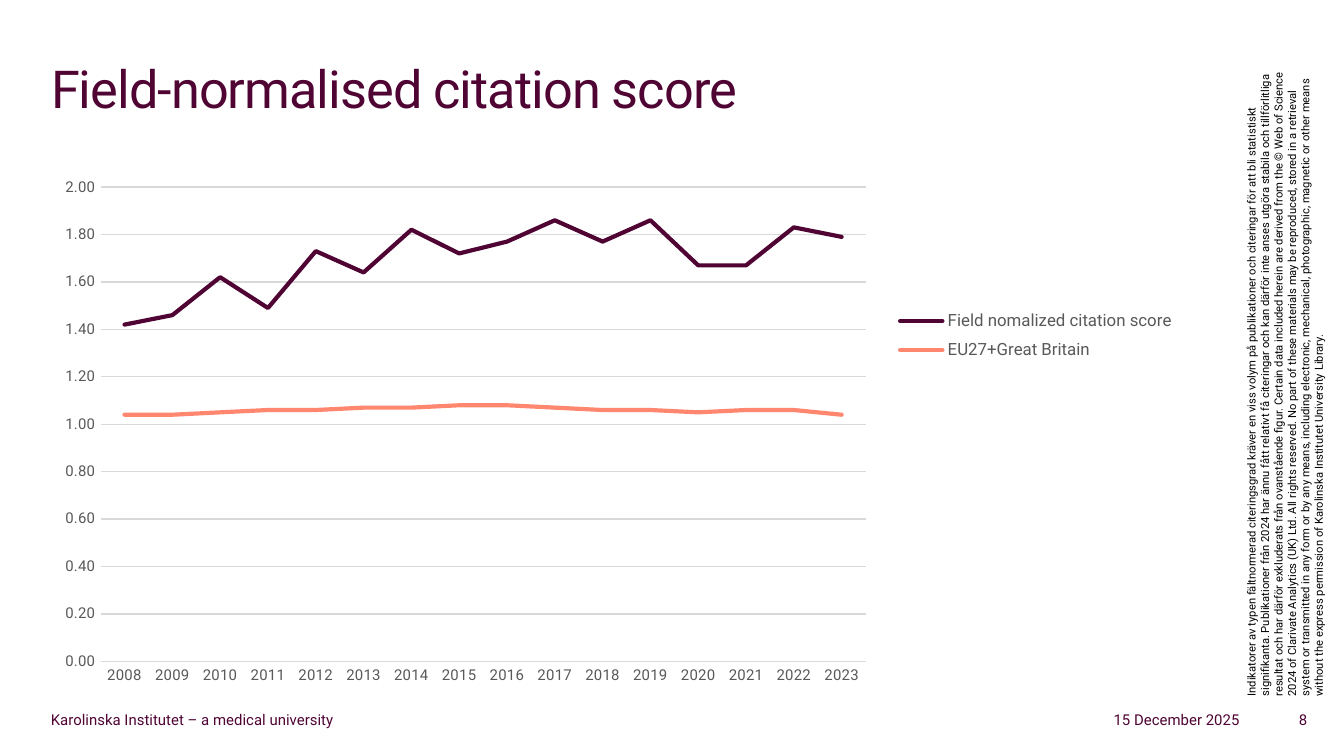
from dataclasses import dataclass

from pptx import Presentation
from pptx import util as u
from pptx.chart import data as cd
from pptx.dml.color import RGBColor
from pptx.enum import chart as ch, text as tx
from pptx.oxml import parse_xml
from pptx.oxml.ns import nsdecls


@dataclass(frozen=True)
class Theme:
    """Colours, font and type sizes of the slide."""
    font: str = "Roboto"
    plum: str = "4F0433"
    coral: str = "FF876F"
    gray: str = "595959"
    rule: str = "D9D9D9"
    ink: str = "000000"
    head: float = 28
    base: float = 10
    key: float = 9
    small: float = 8
    note: float = 6


T = Theme()
W = u.Inches(10)
H = W * 9 // 16

YEARS = [str(year) for year in range(2008, 2024)]
SCORES = {
    "Field nomalized citation score": (T.plum, [
        1.42, 1.46, 1.62, 1.49, 1.73, 1.64, 1.82, 1.72,
        1.77, 1.86, 1.77, 1.86, 1.67, 1.67, 1.83, 1.79]),
    "EU27+Great Britain": (T.coral, [
        1.04, 1.04, 1.05, 1.06, 1.06, 1.07, 1.07, 1.08,
        1.08, 1.07, 1.06, 1.06, 1.05, 1.06, 1.06, 1.04]),
}
NOTE = (
    "Indikatorer av typen fältnormerad citeringsgrad kräver en viss volym på "
    "publikationer och citeringar för att bli statistiskt signifikanta. "
    "Publikationer från 2024 har ännu fått relativt få citeringar och kan därför "
    "inte anses utgöra stabila och tillförlitliga resultat och har därför "
    "exkluderats från ovanstående figur. Certain data included herein are derived "
    "from the © Web of Science 2024 of Clarivate Analytics (UK) Ltd. All rights "
    "reserved. No part of these materials may be reproduced, stored in a retrieval "
    "system or transmitted in any form or by any means, including electronic, "
    "mechanical, photographic, magnetic or other means without the express "
    "permission of Karolinska Institutet University Library."
)


def span(x, y, w, h):
    """Turn percentages of the slide into a box of lengths."""
    return [int(side * part / 100) for side, part in zip((W, H, W, H), (x, y, w, h))]


def style(font, size, color):
    """Apply the theme font with a size and a colour."""
    font.name, font.size, font.bold = T.font, u.Pt(size), False
    font.color.rgb = RGBColor.from_string(color)


def write(shape, words, size, color, anchor, align=tx.PP_ALIGN.LEFT):
    """Set and format one paragraph, and return its run."""
    frame = shape.text_frame
    frame.text = words
    frame.word_wrap = True
    frame.auto_size = tx.MSO_AUTO_SIZE.NONE
    frame.vertical_anchor = anchor
    para = frame.paragraphs[0]
    para.alignment = align
    style(para.runs[0].font, size, color)
    return para.runs[0]


def add_head(slide, box):
    """Move the title placeholder into the box and fill it."""
    title = slide.shapes.title
    title.left, title.top, title.width, title.height = box
    run = write(title, "Field-normalised citation score", T.head, T.plum,
                tx.MSO_ANCHOR.TOP)
    run.font._element.set("spc", "-50")


def add_foot(slide, box):
    """Place the sender, date and page number along the box."""
    left, top, width, height = box
    right = tx.PP_ALIGN.RIGHT
    parts = (
        ("Karolinska Institutet – a medical university", 0, 29.6, tx.PP_ALIGN.LEFT),
        ("15 December 2025", 72.9, 21.8, right),
        ("8", 92.1, 7.85, right),
    )
    for words, start, share, align in parts:
        cell = slide.shapes.add_textbox(
            left + int(width * start / 100), top, int(width * share / 100), height)
        write(cell, words, T.small, T.plum, tx.MSO_ANCHOR.MIDDLE, align)
        cell.text_frame.margin_top = u.Inches(0.04)
        cell.text_frame.margin_bottom = 0


def add_note(slide, box):
    """Place the terms of use, turned to read upwards."""
    note = slide.shapes.add_textbox(*box)
    note.rotation = 270
    write(note, NOTE, T.note, T.ink, tx.MSO_ANCHOR.TOP)


def layout(x, y, w, h, inner=False):
    """Build a fixed chart layout from percentages of the chart."""
    target = '<c:layoutTarget val="inner"/>' if inner else ""
    modes = "".join(f'<c:{k}Mode val="edge"/>' for k in "xy")
    sides = "".join(f'<c:{k} val="{v / 100}"/>' for k, v in zip("xywh", (x, y, w, h)))
    return parse_xml(f'<c:layout {nsdecls("c")}><c:manualLayout>'
                     f'{target}{modes}{sides}</c:manualLayout></c:layout>')


def fix(node, spot):
    """Replace the layout of a chart part."""
    for old in node.xpath("c:layout"):
        node.remove(old)
    entry = node.xpath("c:legendPos")
    if entry:
        entry[0].addnext(spot)
    else:
        node.insert(0, spot)


def rule(line):
    """Draw a thin light line."""
    line.color.rgb = RGBColor.from_string(T.rule)
    line.width = u.Pt(0.75)


def add_trend(slide, box):
    """Place the line chart with its axes and key."""
    data = cd.CategoryChartData(number_format="0.00")
    data.categories = YEARS
    for name, (_, scores) in SCORES.items():
        data.add_series(name, scores)
    chart = slide.shapes.add_chart(ch.XL_CHART_TYPE.LINE, *box, data).chart
    chart.has_title = False
    style(chart.font, T.base, T.ink)
    plot = chart.plots[0]
    plot.vary_by_categories = False

    for line, (color, _) in zip(plot.series, SCORES.values()):
        line.smooth = False
        line.marker.style = ch.XL_MARKER_STYLE.NONE
        line.format.line.color.rgb = RGBColor.from_string(color)
        line.format.line.width = u.Pt(2.25)
    for stroke in chart._chartSpace.xpath(".//c:ser/c:spPr/a:ln"):
        stroke.set("cap", "rnd")

    years, score = chart.category_axis, chart.value_axis
    for axis in (years, score):
        axis.major_tick_mark = axis.minor_tick_mark = ch.XL_TICK_MARK.NONE
        style(axis.tick_labels.font, T.small, T.gray)
    rule(years.format.line)
    score.format.line.fill.background()
    score.minimum_scale, score.maximum_scale, score.major_unit = 0, 2, 0.2
    score.tick_labels.number_format = "0.00"
    score.tick_labels.number_format_is_linked = False
    rule(score.major_gridlines.format.line)

    chart.has_legend = True
    key = chart.legend
    key.position = ch.XL_LEGEND_POSITION.RIGHT
    key.include_in_layout = False
    style(key.font, T.key, T.gray)
    fix(chart._chartSpace.xpath("c:chart/c:plotArea")[0],
        layout(5.4, 3.8, 61.6, 87.8, True))
    fix(key._element, layout(67.7, 25, 26, 12.6))


def main():
    """Build and save the slide."""
    deck = Presentation()
    deck.slide_width, deck.slide_height = W, H
    slide = deck.slides.add_slide(deck.slide_layouts[5])
    add_head(slide, span(2.8, 6.58, 94.4, 16.71))
    add_foot(slide, span(2.8, 93.16, 95.5, 3.38))
    add_trend(slide, span(2.5, 22.04, 92.4, 71.47))
    add_note(slide, span(68.4, 47.29, 49.9, 4.44))
    deck.save("out.pptx")


if __name__ == "__main__":
    main()
